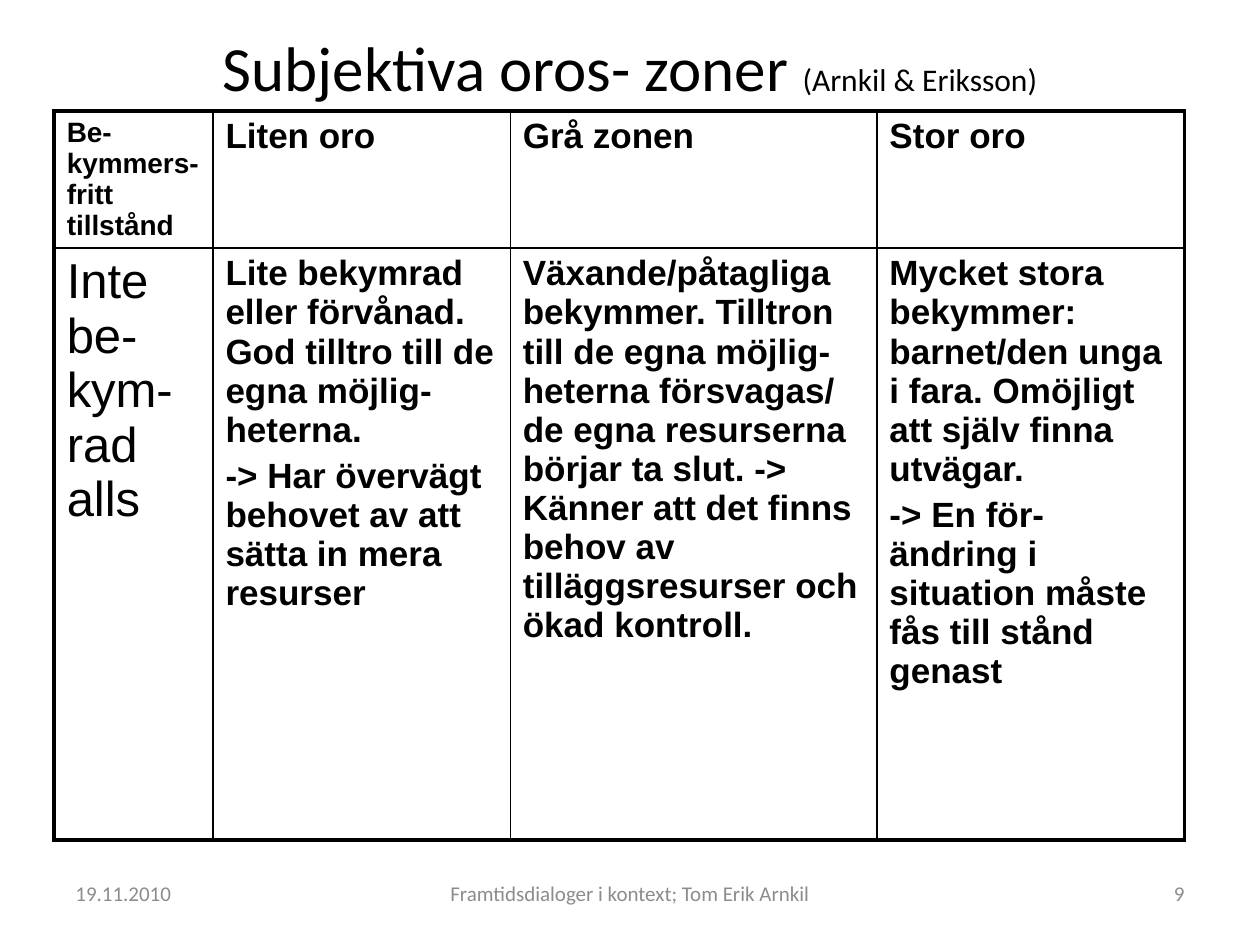
"""Build a slide with a table of the zones of subjective worry."""
from lxml.etree import SubElement
from pptx import Presentation
from pptx.dml.color import RGBColor
from pptx.enum.text import MSO_ANCHOR as Anchor, MSO_AUTO_SIZE as AutoSize, PP_ALIGN as Align
from pptx.oxml.ns import qn
from pptx.util import Inches, Pt

COLORS = {"text": "000000", "border": "000000", "footer": "8C8C8C"}
WIDTH, HEIGHT = 10, 7.5
MARGIN = WIDTH * 0.05
TITLE = [("Subjektiva oros- zoner ", 36), ("(Arnkil & Eriksson)", 18)]
COLUMNS = [1.26, 2.36, 2.91, 2.44]
ROWS = [1.01, 4.7]
TABLE_LEFT, TABLE_TOP = 0.43, 0.88
OUTER, INNER = 2.25, 1
CELLS = [
    [
        (["Be-kymmers-fritt tillstånd"], 16, True),
        (["Liten oro"], 20, True),
        (["Grå zonen"], 20, True),
        (["Stor oro"], 20, True),
    ],
    [
        (["Inte be-kym-rad alls"], 28, False),
        (["Lite bekymrad eller förvånad. God tilltro till de egna möjlig-heterna.",
          "-> Har övervägt behovet av att sätta in mera resurser"], 20, True),
        (["Växande/påtagliga bekymmer. Tilltron till de egna möjlig-heterna försvagas/ "
          "de egna resurserna börjar ta slut. -> Känner att det finns behov av "
          "tilläggsresurser och ökad kontroll."], 20, True),
        (["Mycket stora bekymmer: barnet/den unga i fara. Omöjligt att själv finna utvägar.",
          "-> En för-ändring i situation måste fås till stånd genast"], 20, True),
    ],
]
SIDE, MIDDLE = WIDTH * 0.7 / 3, WIDTH * 0.95 / 3
FOOTER_TOP, FOOTER_HEIGHT = 6.83, 0.52
FOOTERS = [
    ("19.11.2010", MARGIN, SIDE, Align.LEFT),
    ("Framtidsdialoger i kontext; Tom Erik Arnkil", (WIDTH - MIDDLE) / 2, MIDDLE, Align.CENTER),
    ("9", WIDTH - MARGIN - SIDE, SIDE, Align.RIGHT),
]


def add_run(paragraph, text, size, font, color, bold=False):
    run = paragraph.add_run()
    run.text = text
    run.font.size, run.font.name, run.font.bold = Pt(size), font, bold
    run.font.color.rgb = RGBColor.from_string(COLORS[color])


def add_border(cell, side, width):
    line = SubElement(cell._tc.get_or_add_tcPr(), qn(f"a:ln{side}"), w=str(Pt(width)))
    fill = SubElement(line, qn("a:solidFill"))
    SubElement(fill, qn("a:srgbClr"), val=COLORS["border"])


def add_title(slide):
    title = slide.shapes.title
    title.left, title.top = Inches(MARGIN), Inches(0.21)
    title.width, title.height = Inches(WIDTH - 2 * MARGIN), Inches(0.63)
    frame = title.text_frame
    frame.auto_size, frame.vertical_anchor = AutoSize.NONE, Anchor.MIDDLE
    paragraph = frame.paragraphs[0]
    paragraph.alignment = Align.CENTER
    for text, size in TITLE:
        add_run(paragraph, text, size, "Calibri", "text")


def fill_cell(cell, texts, size, bold):
    frame = cell.text_frame
    for index, text in enumerate(texts):
        paragraph = frame.add_paragraph() if index else frame.paragraphs[0]
        if index:
            paragraph.space_before = Pt(size * 0.2)
        add_run(paragraph, text, size, "Arial", "text", bold)


def add_zones(slide):
    frame = slide.shapes.add_table(
        len(ROWS), len(COLUMNS), Inches(TABLE_LEFT), Inches(TABLE_TOP),
        Inches(sum(COLUMNS)), Inches(sum(ROWS)))
    table = frame.table
    table.first_row = table.horz_banding = False
    for column, width in zip(table.columns, COLUMNS):
        column.width = Inches(width)
    for row, height in zip(table.rows, ROWS):
        row.height = Inches(height)
    last_row, last_column = len(ROWS) - 1, len(COLUMNS) - 1
    for r, row in enumerate(CELLS):
        for c, content in enumerate(row):
            cell = table.cell(r, c)
            fill_cell(cell, *content)
            edges = {"L": c == 0, "R": c == last_column, "T": r == 0, "B": r == last_row}
            for side, is_outer in edges.items():
                add_border(cell, side, OUTER if is_outer else INNER)
            cell.fill.background()


def add_footers(slide):
    for text, left, width, alignment in FOOTERS:
        box = slide.shapes.add_textbox(
            Inches(left), Inches(FOOTER_TOP), Inches(width), Inches(FOOTER_HEIGHT))
        frame = box.text_frame
        frame.word_wrap, frame.vertical_anchor = True, Anchor.MIDDLE
        paragraph = frame.paragraphs[0]
        paragraph.alignment = alignment
        add_run(paragraph, text, 12, "Calibri", "footer")


def main():
    presentation = Presentation()
    presentation.slide_width, presentation.slide_height = Inches(WIDTH), Inches(HEIGHT)
    slide = presentation.slides.add_slide(presentation.slide_layouts[5])
    add_title(slide)
    add_zones(slide)
    add_footers(slide)
    presentation.save("out.pptx")


if __name__ == "__main__":
    main()
